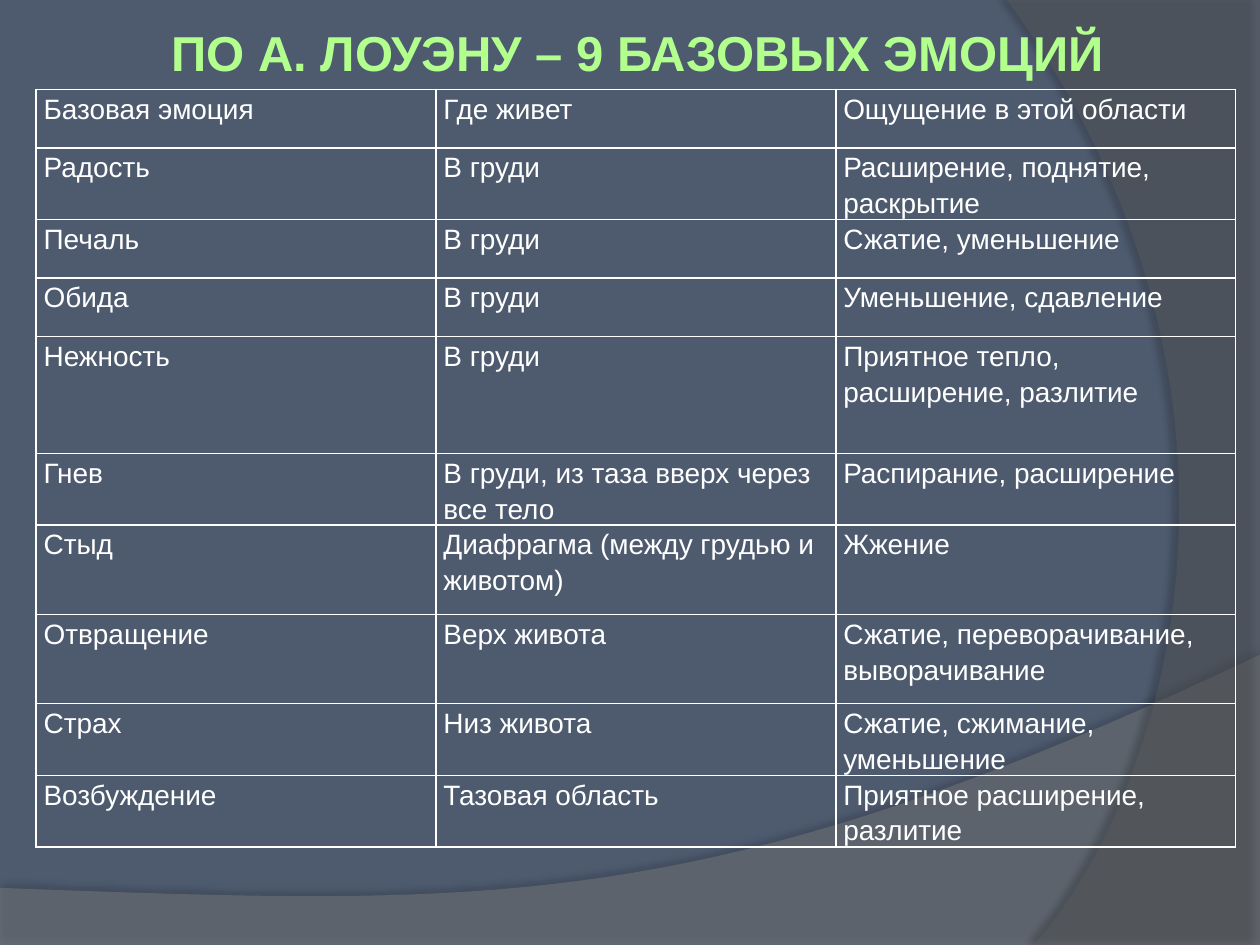
from lxml import etree
from pptx import Presentation
from pptx import util as u
from pptx.dml.color import RGBColor
from pptx.enum import text
from pptx.oxml import ns

COLORS = {
    "background": "4E5B6F",
    "wave": "7F7F7F",
    "arc": "5E5E5E",
    "shadow": "000000",
    "title": "B2FF8E",
    "table": "FFFFFF",
}
FONT = "Arial"
TITLE = "ПО А. ЛОУЭНУ – 9 БАЗОВЫХ ЭМОЦИЙ"
EMOTIONS = [
    ("Базовая эмоция", "Где живет", "Ощущение в этой области"),
    ("Радость", "В груди", "Расширение, поднятие, раскрытие"),
    ("Печаль", "В груди", "Сжатие, уменьшение"),
    ("Обида", "В груди", "Уменьшение, сдавление"),
    ("Нежность", "В груди", "Приятное тепло, расширение, разлитие"),
    ("Гнев", "В груди, из таза вверх через все тело", "Распирание, расширение"),
    ("Стыд", "Диафрагма (между грудью и животом)", "Жжение"),
    ("Отвращение", "Верх живота", "Сжатие, переворачивание, выворачивание"),
    ("Страх", "Низ живота", "Сжатие, сжимание, уменьшение"),
    ("Возбуждение", "Тазовая область", "Приятное расширение, разлитие"),
]
COLUMN_WIDTH = 8.06
ROW_HEIGHT = 1.18
TALL_ROWS = {"Нежность": 2.36, "Стыд": 1.8, "Отвращение": 1.8}


def rgb(name):
    return RGBColor.from_string(COLORS[name])


def set_all(target, values):
    for name, value in values.items():
        setattr(target, name, value)


def add_element(parent, tag, **attributes):
    return etree.SubElement(parent, ns.qn(tag), attributes)


def add_color(parent, name, opacity=100):
    color = add_element(parent, "a:srgbClr", val=COLORS[name])
    add_element(color, "a:alpha", val=str(opacity * 1000))


def curve(start, control_1, control_2, end, steps=40):
    """Points along a cubic Bezier curve, both ends included."""
    points = []
    for step in range(steps + 1):
        t = step / steps
        weights = ((1 - t) ** 3, 3 * t * (1 - t) ** 2, 3 * t * t * (1 - t), t ** 3)
        ends = (start, control_1, control_2, end)
        points.append(tuple(sum(w * p[axis] for w, p in zip(weights, ends))
                            for axis in (0, 1)))
    return points


def add_swoosh(slide, points, color, opacity, shadow):
    """Translucent background outline; shadow is (opacity, blur, distance, angle)."""
    corners = [(u.Cm(x), u.Cm(y)) for x, y in points]
    builder = slide.shapes.build_freeform(*corners[0])
    builder.add_line_segments(corners[1:], close=True)
    shape = builder.convert_to_shape()
    shape.line.fill.background()
    shape.fill.solid()
    shape.fill.fore_color.rgb = rgb(color)
    fill_color = shape._element.spPr.find(".//" + ns.qn("a:srgbClr"))
    add_element(fill_color, "a:alpha", val=str(opacity * 1000))

    shadow_opacity, blur, distance, angle = shadow
    shape.shadow.inherit = False
    effects = shape._element.spPr.find(ns.qn("a:effectLst"))
    outer = add_element(effects, "a:outerShdw", blurRad=str(u.Pt(blur)),
                        dist=str(u.Pt(distance)), dir=str(angle * 60000),
                        algn="ctr", rotWithShape="0")
    add_color(outer, "shadow", shadow_opacity)


def format_title(slide):
    title = slide.shapes.title
    set_all(title, {"left": u.Cm(3.1), "top": u.Cm(0.33),
                    "width": u.Cm(19.5), "height": u.Cm(1.45)})
    frame = title.text_frame
    frame.text = TITLE
    set_all(frame, {"word_wrap": False,
                    "auto_size": text.MSO_AUTO_SIZE.SHAPE_TO_FIT_TEXT,
                    "vertical_anchor": text.MSO_ANCHOR.MIDDLE})
    paragraph = frame.paragraphs[0]
    paragraph.alignment = text.PP_ALIGN.CENTER
    font = paragraph.runs[0].font
    set_all(font, {"name": FONT, "size": u.Pt(28), "bold": True})
    font.color.rgb = rgb("title")
    # The placeholder comes first; bring it in front of the background.
    slide.shapes._spTree.append(title._element)


def add_borders(cell):
    properties = cell._tc.get_or_add_tcPr()
    for index, side in enumerate(("L", "R", "T", "B")):
        line = etree.Element(ns.qn(f"a:ln{side}"), w=str(u.Pt(1)))
        add_color(add_element(line, "a:solidFill"), "table")
        properties.insert(index, line)


def fill_cell(cell, words):
    cell.text = words
    set_all(cell, {"margin_left": u.Cm(0.15), "margin_right": u.Cm(0.15),
                   "margin_top": 0, "margin_bottom": 0})
    cell.fill.background()
    add_borders(cell)
    paragraph = cell.text_frame.paragraphs[0]
    paragraph.line_spacing = 1.15
    font = paragraph.runs[0].font
    set_all(font, {"name": FONT, "size": u.Pt(16), "bold": False})
    font.color.rgb = rgb("table")


def add_emotion_table(slide):
    heights = [TALL_ROWS.get(row[0], ROW_HEIGHT) for row in EMOTIONS]
    columns = len(EMOTIONS[0])
    frame = slide.shapes.add_table(
        len(EMOTIONS), columns, u.Cm(0.73), u.Cm(1.8),
        u.Cm(COLUMN_WIDTH * columns), u.Cm(sum(heights)))
    table = frame.table
    set_all(table, {"first_row": False, "horz_banding": False})
    for column in table.columns:
        column.width = u.Cm(COLUMN_WIDTH)
    for row, height, words in zip(table.rows, heights, EMOTIONS):
        row.height = u.Cm(height)
        for cell, word in zip(row.cells, words):
            fill_cell(cell, word)


def main():
    presentation = Presentation()
    set_all(presentation, {"slide_width": u.Cm(25.4), "slide_height": u.Cm(19.05)})
    slide = presentation.slides.add_slide(presentation.slide_layouts[5])
    slide.background.fill.solid()
    slide.background.fill.fore_color.rgb = rgb("background")

    wave = [(0, 19.05), (25.4, 19.05)]
    wave += curve((25.4, 13.2), (14.2, 18.52), (9.93, 18.26), (0, 17.9))
    add_swoosh(slide, wave, "wave", 45, (35, 4, 3.5, 270))
    arc = [(25.4, 0), (25.4, 19.05)]
    arc += curve((20.85, 19.05), (23.75, 15.72), (25.86, 7.62), (20.3, 0))
    add_swoosh(slide, arc, "arc", 40, (45, 4, 4, 180))

    add_emotion_table(slide)
    format_title(slide)
    presentation.save("out.pptx")


if __name__ == "__main__":
    main()
